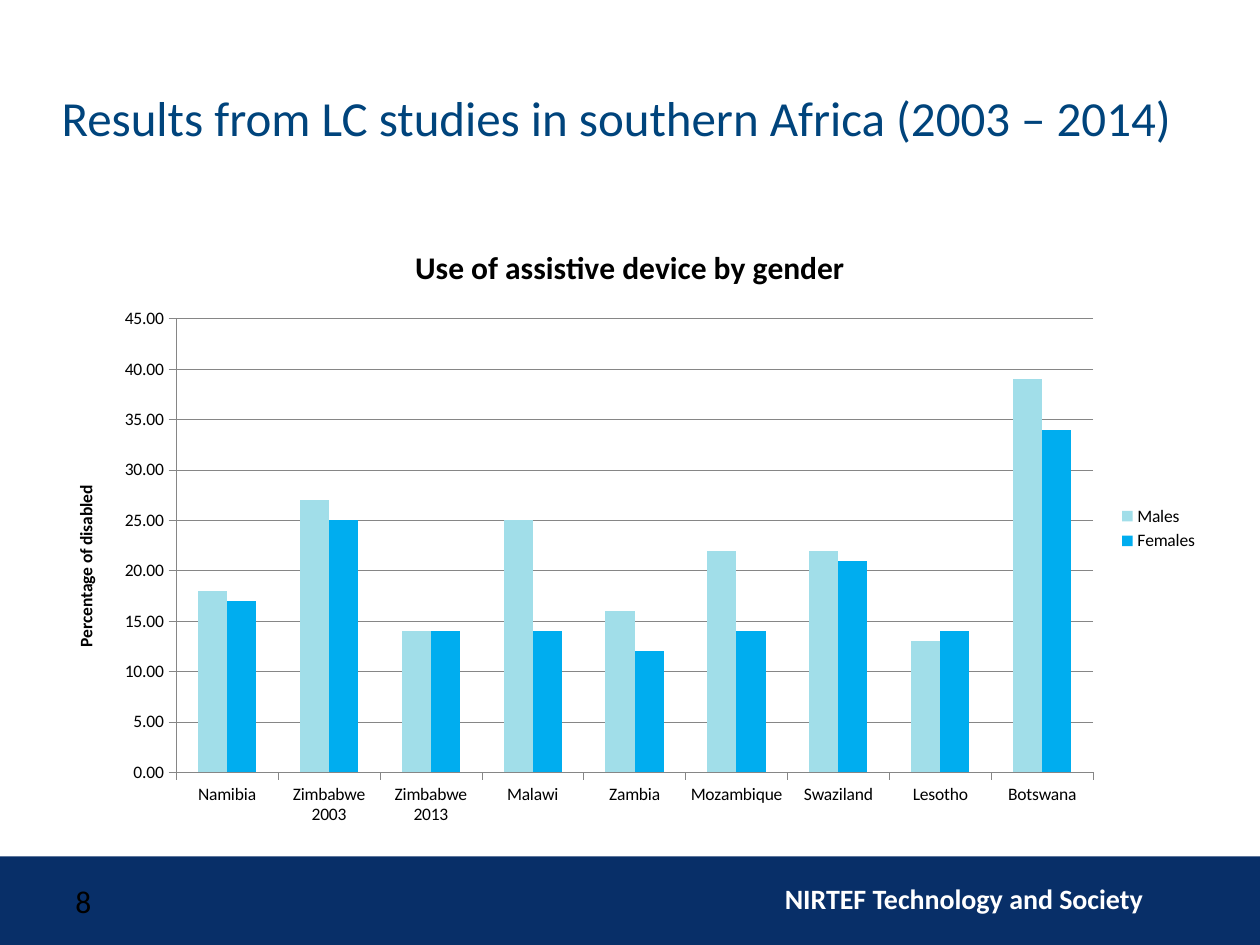
from pptx import Presentation
from pptx.chart.data import CategoryChartData
from pptx.dml.color import RGBColor
from pptx.enum.chart import XL_CHART_TYPE, XL_LEGEND_POSITION, XL_TICK_MARK
from pptx.enum.shapes import MSO_SHAPE
from pptx.enum.text import MSO_ANCHOR, PP_ALIGN
from pptx.util import Pt

COLUMNS = XL_CHART_TYPE.COLUMN_CLUSTERED
LEGEND_RIGHT = XL_LEGEND_POSITION.RIGHT
TICK_OUT = XL_TICK_MARK.OUTSIDE
RECTANGLE = MSO_SHAPE.RECTANGLE
MIDDLE = MSO_ANCHOR.MIDDLE
LEFT, RIGHT = PP_ALIGN.LEFT, PP_ALIGN.RIGHT

FONT = "Calibri"
NAVY = RGBColor(0x08, 0x2F, 0x68)
TITLE_BLUE = RGBColor(0x00, 0x44, 0x7C)
WHITE = RGBColor(0xFF, 0xFF, 0xFF)
BLACK = RGBColor(0x00, 0x00, 0x00)
GRID_GRAY = RGBColor(0x86, 0x86, 0x86)
LIGHT_BLUE = RGBColor(0xA1, 0xDE, 0xE9)
BRIGHT_BLUE = RGBColor(0x00, 0xAD, 0xEF)

MARGIN = 28
CONTENT_WIDTH = 664
COUNTRIES = ["Namibia", "Zimbabwe 2003", "Zimbabwe 2013", "Malawi", "Zambia",
             "Mozambique", "Swaziland", "Lesotho", "Botswana"]
SERIES = [
    ("Males", LIGHT_BLUE, [18, 27, 14, 25, 16, 22, 22, 13, 39]),
    ("Females", BRIGHT_BLUE, [17, 25, 14, 14, 12, 14, 21, 14, 34]),
]


def style_font(font, size, color, bold=False):
    font.name = FONT
    font.size = Pt(size)
    font.bold = bold
    font.color.rgb = color


def add_footer_band(s):
    band = s.shapes.add_shape(RECTANGLE, 0, Pt(489.4), Pt(720), Pt(50.6))
    band.shadow.inherit = False
    band.fill.solid()
    band.fill.fore_color.rgb = NAVY
    band.line.fill.background()


def add_text(s, text, left, top, width, height, size, color, bold=False, align=LEFT):
    tf = s.shapes.add_textbox(Pt(left), Pt(top), Pt(width), Pt(height)).text_frame
    tf.word_wrap = True
    p = tf.paragraphs[0]
    p.text = text
    p.alignment = align
    style_font(p.font, size, color, bold)


def set_title(s, text):
    title = s.shapes.title
    title.left, title.top = Pt(MARGIN), Pt(21.6)
    title.width, title.height = Pt(CONTENT_WIDTH), Pt(90)
    tf = title.text_frame
    tf.vertical_anchor = MIDDLE
    p = tf.paragraphs[0]
    p.text = text
    p.alignment = LEFT
    style_font(p.font, 28, TITLE_BLUE)


def set_heading(title, text, size):
    """Fill a chart title or an axis title in bold."""
    p = title.text_frame.paragraphs[0]
    p.text = text
    style_font(p.font, size, BLACK, True)


def style_line(line):
    line.color.rgb = GRID_GRAY
    line.width = Pt(0.25)


def add_device_chart(s):
    data = CategoryChartData(number_format="0.00")
    data.categories = COUNTRIES
    for name, _, values in SERIES:
        data.add_series(name, values)
    chart = s.shapes.add_chart(COLUMNS, Pt(MARGIN), Pt(126), Pt(CONTENT_WIDTH),
                               Pt(352), data).chart
    style_font(chart.font, 10, BLACK)
    set_heading(chart.chart_title, "Use of assistive device by gender", 18)
    chart.has_legend = True
    chart.legend.position = LEGEND_RIGHT
    chart.legend.include_in_layout = False

    plot = chart.plots[0]
    plot.gap_width = 150
    plot.overlap = 0
    plot.vary_by_categories = False
    for series, (_, color, _) in zip(plot.series, SERIES):
        series.format.fill.solid()
        series.format.fill.fore_color.rgb = color

    for axis in (chart.category_axis, chart.value_axis):
        axis.major_tick_mark = TICK_OUT
        style_line(axis.format.line)
    value_axis = chart.value_axis
    value_axis.minimum_scale, value_axis.maximum_scale = 0, 45
    value_axis.major_unit = 5
    value_axis.tick_labels.number_format = "0.00"
    value_axis.tick_labels.number_format_is_linked = False
    style_line(value_axis.major_gridlines.format.line)
    set_heading(value_axis.axis_title, "Percentage of disabled", 10)


def main():
    prs = Presentation()
    prs.slide_width, prs.slide_height = Pt(720), Pt(540)
    s = prs.slides.add_slide(prs.slide_layouts[5])
    add_footer_band(s)
    add_text(s, "NIRTEF Technology and Society", 348.5, 500.4, 311.8, 26.6,
             16, WHITE, True, RIGHT)
    set_title(s, "Results from LC studies in southern Africa (2003 – 2014)")
    add_text(s, "8", 36, 500.4, 168, 28.8, 18, BLACK)
    add_device_chart(s)
    prs.save("out.pptx")


if __name__ == "__main__":
    main()
